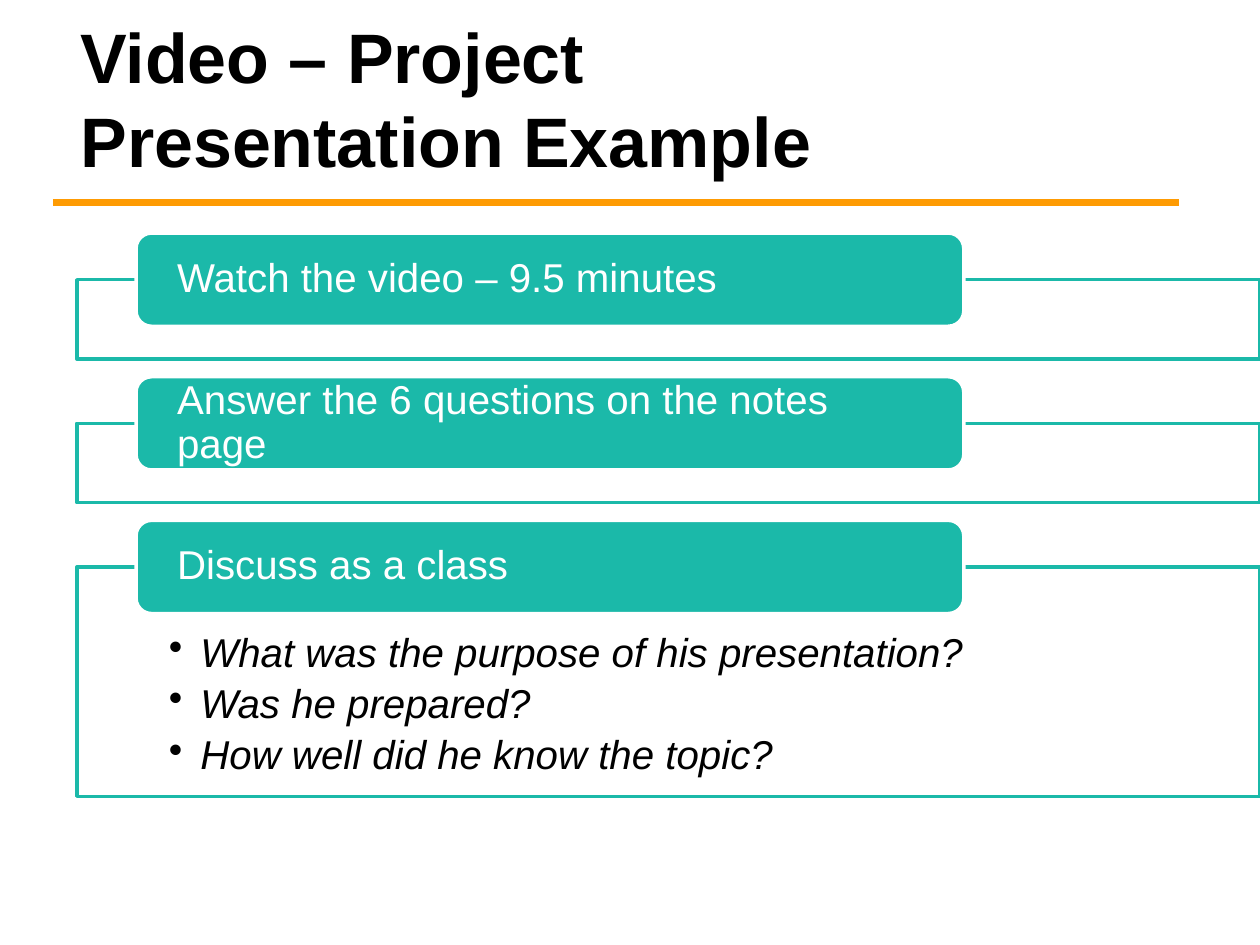
"""Build a slide listing three video activities, the last with discussion questions."""
import dataclasses

import pptx
import pptx.dml.color
import pptx.enum.shapes
import pptx.enum.text
import pptx.oxml
import pptx.oxml.ns
import pptx.shapes.autoshape
import pptx.slide
import pptx.text.text
import pptx.util

Inches = pptx.util.Inches
Pt = pptx.util.Pt
Color = pptx.dml.color.RGBColor
Shape = pptx.enum.shapes.MSO_SHAPE
Anchor = pptx.enum.text.MSO_ANCHOR


@dataclasses.dataclass(frozen=True)
class Theme:
    """Colours, font and type sizes."""
    teal: Color = Color(0x1B, 0xB9, 0xA9)
    orange: Color = Color(0xFE, 0x9B, 0x03)
    black: Color = Color(0, 0, 0)
    white: Color = Color(0xFF, 0xFF, 0xFF)
    font: str = "Arial"
    title_size: int = 40
    body_size: int = 23


@dataclasses.dataclass(frozen=True)
class Activity:
    """A heading with its frame height and optional questions."""
    heading: str
    frame_height: float = 0.63
    questions: tuple[str, ...] = ()


THEME = Theme()
FIRST_TOP = 2.22
FRAME_GAP = 0.51
HEADING_HEIGHT = 0.74
ACTIVITIES = (
    Activity("Watch the video – 9.5 minutes"),
    Activity("Answer the 6 questions on the notes page"),
    Activity("Discuss as a class", 1.82, (
        "What was the purpose of his presentation?",
        "Was he prepared?",
        "How well did he know the topic?",
    )),
)


def set_frame(frame: pptx.text.text.TextFrame, anchor: Anchor,
              side: float, top: float, bottom: float) -> None:
    """Set wrapping, anchor and insets of a text frame."""
    frame.word_wrap = True
    frame.vertical_anchor = anchor
    frame.margin_left = frame.margin_right = Inches(side)
    frame.margin_top, frame.margin_bottom = Inches(top), Inches(bottom)


def write(para: pptx.text.text._Paragraph, text: str, size: int, color: Color,
          bold: bool = False, italic: bool = False) -> None:
    """Add one left-aligned run to a paragraph."""
    para.alignment = pptx.enum.text.PP_ALIGN.LEFT
    span = para.add_run()
    span.text = text
    span.font.name = THEME.font
    span.font.size = Pt(size)
    span.font.bold, span.font.italic = bold, italic
    span.font.color.rgb = color


def add_box(page: pptx.slide.Slide, kind: Shape, left: float, top: float, width: float,
            height: float, fill: Color, line: Color) -> pptx.shapes.autoshape.Shape:
    """Add a filled and outlined shape without shadow."""
    box = page.shapes.add_shape(kind, Inches(left), Inches(top), Inches(width), Inches(height))
    box.shadow.inherit = False
    box.fill.solid()
    box.fill.fore_color.rgb = fill
    box.line.color.rgb = line
    box.line.width = Pt(2)
    return box


def add_bullet(para: pptx.text.text._Paragraph) -> None:
    """Give a paragraph a hanging round bullet."""
    properties = para._p.get_or_add_pPr()
    properties.set("marL", str(Inches(0.25)))
    properties.set("indent", str(-Inches(0.25)))
    bullet = pptx.oxml.parse_xml(f'<a:buChar {pptx.oxml.ns.nsdecls("a")} char="•"/>')
    properties.append(bullet)


def add_activity(page: pptx.slide.Slide, activity: Activity, top: float) -> None:
    """Draw the frame, its questions and the heading over its top edge."""
    frame_box = add_box(page, Shape.RECTANGLE, 0.61, top, 9.39, activity.frame_height,
                        THEME.white, THEME.teal)
    frame = frame_box.text_frame
    set_frame(frame, Anchor.TOP, 0.73, 0.52, 0.18)
    for index, question in enumerate(activity.questions):
        para = frame.add_paragraph() if index else frame.paragraphs[0]
        add_bullet(para)
        para.line_spacing = 0.9
        para.space_after = Pt(4.5)
        write(para, question, THEME.body_size, THEME.black, italic=True)

    heading = add_box(page, Shape.ROUNDED_RECTANGLE, 1.08, top - HEADING_HEIGHT / 2,
                      6.57, HEADING_HEIGHT, THEME.teal, THEME.white)
    set_frame(heading.text_frame, Anchor.MIDDLE, 0.29, 0, 0)
    para = heading.text_frame.paragraphs[0]
    para.line_spacing = 0.9
    write(para, activity.heading, THEME.body_size, THEME.white)


def add_title(page: pptx.slide.Slide) -> None:
    """Add the title and the rule beneath it."""
    rule = page.shapes.add_connector(pptx.enum.shapes.MSO_CONNECTOR.STRAIGHT,
                                     Inches(0.42), Inches(1.61), Inches(9.36), Inches(1.61))
    rule.line.color.rgb = THEME.orange
    rule.line.width = Pt(4)
    rule._element.spPr.append(
        pptx.oxml.parse_xml(f'<a:effectLst {pptx.oxml.ns.nsdecls("a")}/>'))
    box = page.shapes.add_textbox(Inches(0.54), Inches(0.42), Inches(7.21), Inches(1.08))
    set_frame(box.text_frame, Anchor.MIDDLE, 0.1, 0, 0.38)
    para = box.text_frame.paragraphs[0]
    para.line_spacing = Pt(48)
    write(para, "Video – Project Presentation Example", THEME.title_size, THEME.black, bold=True)


def main() -> None:
    """Build and save the deck."""
    deck = pptx.Presentation()
    deck.slide_width, deck.slide_height = Inches(10), Inches(7.5)
    page = deck.slides.add_slide(deck.slide_layouts[6])
    add_title(page)
    top = FIRST_TOP
    for activity in ACTIVITIES:
        add_activity(page, activity, top)
        top += activity.frame_height + FRAME_GAP
    deck.save("out.pptx")


if __name__ == "__main__":
    main()
